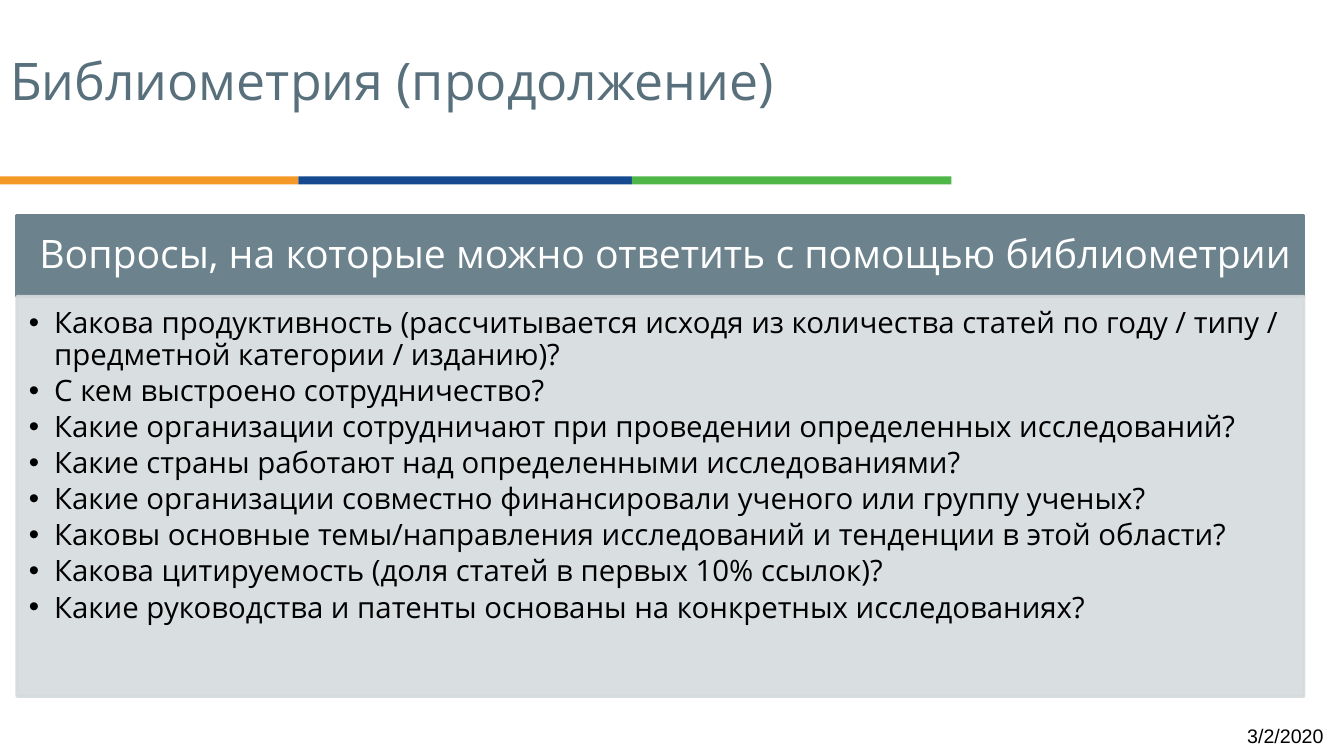
"""Build the slide on questions that bibliometrics can answer."""
from lxml import etree
from pptx import Presentation
from pptx.dml.color import RGBColor
from pptx.enum import shapes, text
from pptx.oxml.ns import qn
from pptx.util import Pt

TITLE = "Библиометрия (продолжение)"
HEAD = "Вопросы, на которые можно ответить с помощью библиометрии"
ITEMS = [
    "Какова продуктивность (рассчитывается исходя из количества статей по году / типу / предметной категории / изданию)?",
    "С кем выстроено сотрудничество?",
    "Какие организации сотрудничают при проведении определенных исследований?",
    "Какие страны работают над определенными исследованиями?",
    "Какие организации совместно финансировали ученого или группу ученых?",
    "Каковы основные темы/направления исследований и тенденции в этой области?",
    "Какова цитируемость (доля статей в первых 10% ссылок)?",
    "Какие руководства и патенты основаны на конкретных исследованиях?",
]
DATE = "3/2/2020"
BARS = [("F49925", 213.1), ("154A90", 238.3), ("4EB748", 228.3)]
LEFT, WIDE = 12.1, 919.4
TOP, HEAD_H, LIST_H = 154.1, 57.6, 285.8
ALIGN, ANCHOR = text.PP_ALIGN, text.MSO_ANCHOR


def color(value):
    return RGBColor.from_string(value)


def rect(box, fill, edge=0, alpha=None):
    shape = slide.shapes.add_shape(shapes.MSO_SHAPE.RECTANGLE, *map(Pt, box))
    shape.shadow.inherit = False
    shape.fill.solid()
    shape.fill.fore_color.rgb = color(fill)
    if edge:
        shape.line.color.rgb = color(fill)
        shape.line.width = Pt(edge)
    else:
        shape.line.fill.background()
    if alpha:
        for node in shape._element.spPr.iter(qn("a:srgbClr")):
            etree.SubElement(node, qn("a:alpha"), val=str(alpha * 1000))
    return shape


def write(shape, lines, size, tint, inset, anchor=ANCHOR.TOP,
          align=ALIGN.LEFT, face="Open Sans", gap=0.9, bullet=False):
    frame = shape.text_frame
    frame.text = "\n".join(lines)
    sides = zip(("left", "top", "right", "bottom"), inset)
    form = {f"margin_{side}": Pt(pad) for side, pad in sides}
    form.update(word_wrap=True, auto_size=text.MSO_AUTO_SIZE.NONE,
                vertical_anchor=anchor)
    for name, value in form.items():
        setattr(frame, name, value)
    for i, para in enumerate(frame.paragraphs):
        para.alignment, para.line_spacing = align, gap
        if bullet:
            para.level = 1
            para.space_before = Pt(3.1 if i else 0)
            mark(para)
        for name, value in {"name": face, "size": Pt(size)}.items():
            setattr(para.runs[0].font, name, value)
        para.runs[0].font.color.rgb = color(tint)


def mark(para):
    props = para._p.get_or_add_pPr()
    props.set("marL", str(Pt(18)))
    props.set("indent", str(-Pt(18)))
    tint = etree.SubElement(props, qn("a:buClr"))
    etree.SubElement(tint, qn("a:srgbClr"), val="000000")
    etree.SubElement(props, qn("a:buFont"), typeface="Arial")
    etree.SubElement(props, qn("a:buChar"), char="•")


deck = Presentation()
deck.slide_width, deck.slide_height = Pt(960), Pt(540)
slide = deck.slides.add_slide(deck.slide_layouts[5])

x = 0
for fill, width in BARS:
    rect((x, 126, width, 5.8), fill)
    x += width

title = slide.shapes.title
place = dict(left=0, top=36, width=641.5, height=85)
for name, value in place.items():
    setattr(title, name, Pt(value))
write(title, [TITLE], 37, "586F7C", (7.2, 3.6, 7.2, 3.6))

head = rect((LEFT, TOP, WIDE, HEAD_H), "6C828C", 2)
write(head, [HEAD], 28, "FFFFFF", (16, 8.6, 0, 8.6), ANCHOR.MIDDLE)

panel = rect((LEFT, TOP + HEAD_H, WIDE, LIST_H), "D5DBDD", 2, 90)
write(panel, ITEMS, 21, "000000", (8.6, 8.6, 11.5, 13), bullet=True)

date = slide.shapes.add_textbox(*map(Pt, (736.6, 511.2, 216, 28.8)))
write(date, [DATE], 14, "000000", (7.2, 3.6, 7.2, 3.6), ANCHOR.MIDDLE,
      ALIGN.RIGHT, "Arial", 1.0)

deck.save("out.pptx")
